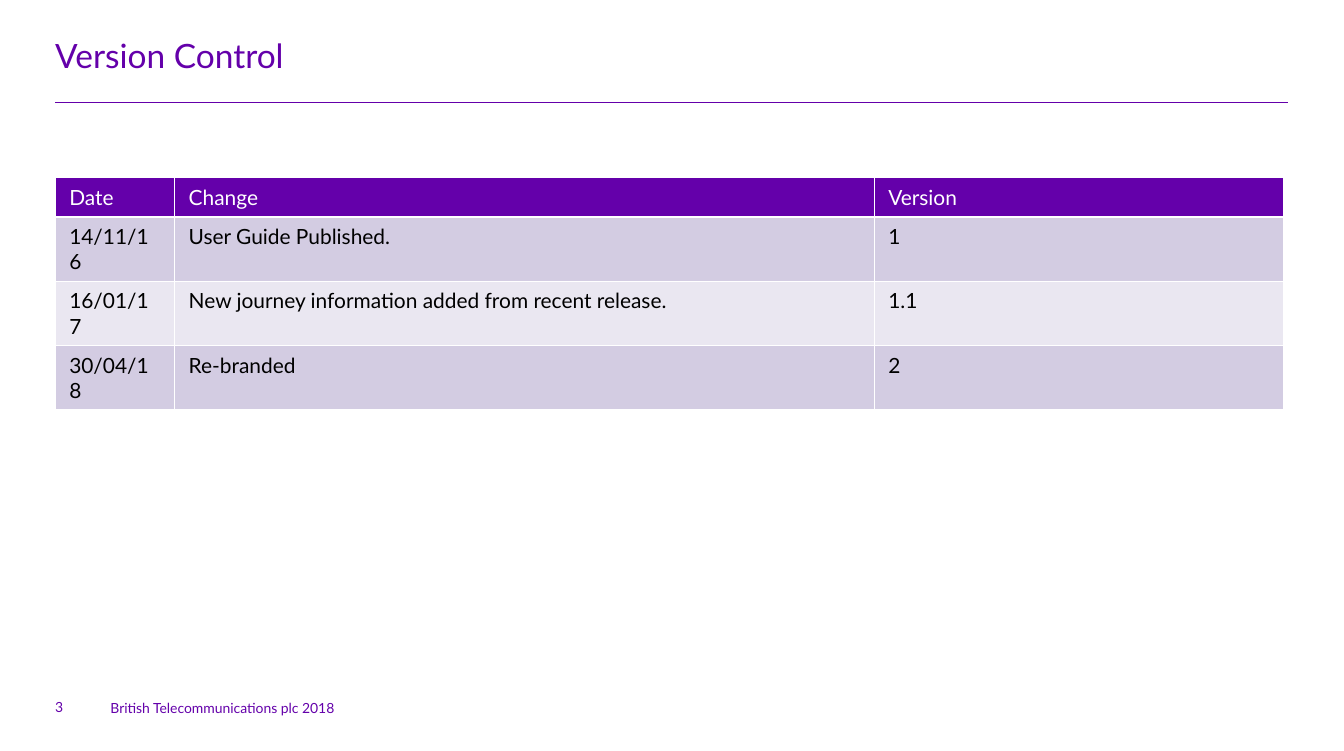
import lxml.etree
import pptx
import pptx.dml.color
import pptx.enum.shapes
import pptx.enum.text
import pptx.oxml.ns
import pptx.util

PURPLE = pptx.dml.color.RGBColor(0x64, 0x00, 0xAA)
LILAC = pptx.dml.color.RGBColor(0xD3, 0xCC, 0xE2)
PALE_LILAC = pptx.dml.color.RGBColor(0xEA, 0xE7, 0xF1)
WHITE = pptx.dml.color.RGBColor(0xFF, 0xFF, 0xFF)
BLACK = pptx.dml.color.RGBColor(0x00, 0x00, 0x00)

FONT = "Lato"
TOP = pptx.enum.text.MSO_ANCHOR.TOP
BOTTOM = pptx.enum.text.MSO_ANCHOR.BOTTOM
qn = pptx.oxml.ns.qn

# Shares of the slide, in percent
LEFT, RIGHT = 4.11, 95.82
ROW_HEIGHT = 5.25
COLUMN_WIDTHS = [8.89, 52.05, 30.47]

VERSIONS = [
    ["Date", "Change", "Version"],
    ["14/11/16", "User Guide Published.", "1"],
    ["16/01/17", "New journey information added from recent release.", "1.1"],
    ["30/04/18", "Re-branded", "2"],
]


def write(frame, text, size=10, color=PURPLE, anchor=TOP, inset=(0, 0)):
    """Fill a text frame with one left-aligned paragraph."""
    frame.word_wrap = True
    frame.auto_size = pptx.enum.text.MSO_AUTO_SIZE.NONE
    frame.vertical_anchor = anchor
    frame.margin_left = frame.margin_right = pptx.util.Inches(inset[0])
    frame.margin_top = frame.margin_bottom = pptx.util.Inches(inset[1])
    write_paragraph(frame.paragraphs[0], text, size, color)


def write_paragraph(para, text, size, color):
    para.alignment = pptx.enum.text.PP_ALIGN.LEFT
    span = para.add_run()
    span.text = text
    span.font.name = FONT
    span.font.size = pptx.util.Pt(size)
    span.font.color.rgb = color


class Page:
    def __init__(self, deck):
        self.width, self.height = deck.slide_width, deck.slide_height
        self.slide = deck.slides.add_slide(deck.slide_layouts[5])

    def x(self, share):
        return round(self.width * share / 100)

    def y(self, share):
        return round(self.height * share / 100)

    def area(self, left, top, width, height):
        return self.x(left), self.y(top), self.x(width), self.y(height)

    def title(self, text, *place):
        title = self.slide.shapes.title
        title.left, title.top, title.width, title.height = self.area(*place)
        write(title.text_frame, text, size=24)

    def text(self, text, *place, **style):
        box = self.slide.shapes.add_textbox(*self.area(*place))
        write(box.text_frame, text, **style)

    def rule(self, top):
        line = self.slide.shapes.add_connector(
            pptx.enum.shapes.MSO_CONNECTOR.STRAIGHT,
            self.x(LEFT), self.y(top), self.x(RIGHT), self.y(top))
        line.line.color.rgb = PURPLE
        line.line.width = pptx.util.Pt(0.25)
        lxml.etree.SubElement(line._element.spPr, qn("a:effectLst"))

    def table(self, rows, top):
        place = self.area(LEFT, top, sum(COLUMN_WIDTHS), ROW_HEIGHT * len(rows))
        table = self.slide.shapes.add_table(len(rows), len(COLUMN_WIDTHS), *place).table
        for column, share in zip(table.columns, COLUMN_WIDTHS):
            column.width = self.x(share)
        for index, values in enumerate(rows):
            table.rows[index].height = self.y(ROW_HEIGHT)
            fill = PURPLE if index == 0 else LILAC if index % 2 else PALE_LILAC
            for number, value in enumerate(values):
                self.cell(table.cell(index, number), value, fill,
                          WHITE if index == 0 else BLACK)

    def cell(self, cell, text, fill, color):
        cell.fill.solid()
        cell.fill.fore_color.rgb = fill
        cell.vertical_anchor = TOP
        cell.margin_left = cell.margin_right = pptx.util.Inches(0.14)
        cell.margin_top = cell.margin_bottom = pptx.util.Inches(0.07)
        write_paragraph(cell.text_frame.paragraphs[0], text, 15, color)
        # White borders come before the fill in the cell properties
        properties = cell._tc.get_or_add_tcPr()
        for position, side in enumerate(["a:lnL", "a:lnR", "a:lnT", "a:lnB"]):
            border = lxml.etree.Element(qn(side), w=str(pptx.util.Pt(1)))
            solid = lxml.etree.SubElement(border, qn("a:solidFill"))
            lxml.etree.SubElement(solid, qn("a:srgbClr"), val=str(WHITE))
            properties.insert(position, border)


def main():
    deck = pptx.Presentation()
    deck.slide_width = pptx.util.Inches(13.39)
    deck.slide_height = pptx.util.Inches(7.48)
    page = Page(deck)

    # Heading
    page.title("Version Control", LEFT, 4.68, RIGHT - LEFT, 6.28)
    page.rule(13.64)

    # Version history
    page.table(VERSIONS, 23.66)

    # Footer
    page.text("3", LEFT, 91.04, 2.91, 4.14, anchor=BOTTOM)
    page.text("British Telecommunications plc 2018", 8.22, 91.44, 17.63, 3.88,
              anchor=BOTTOM)

    deck.save("out.pptx")


if __name__ == "__main__":
    main()
